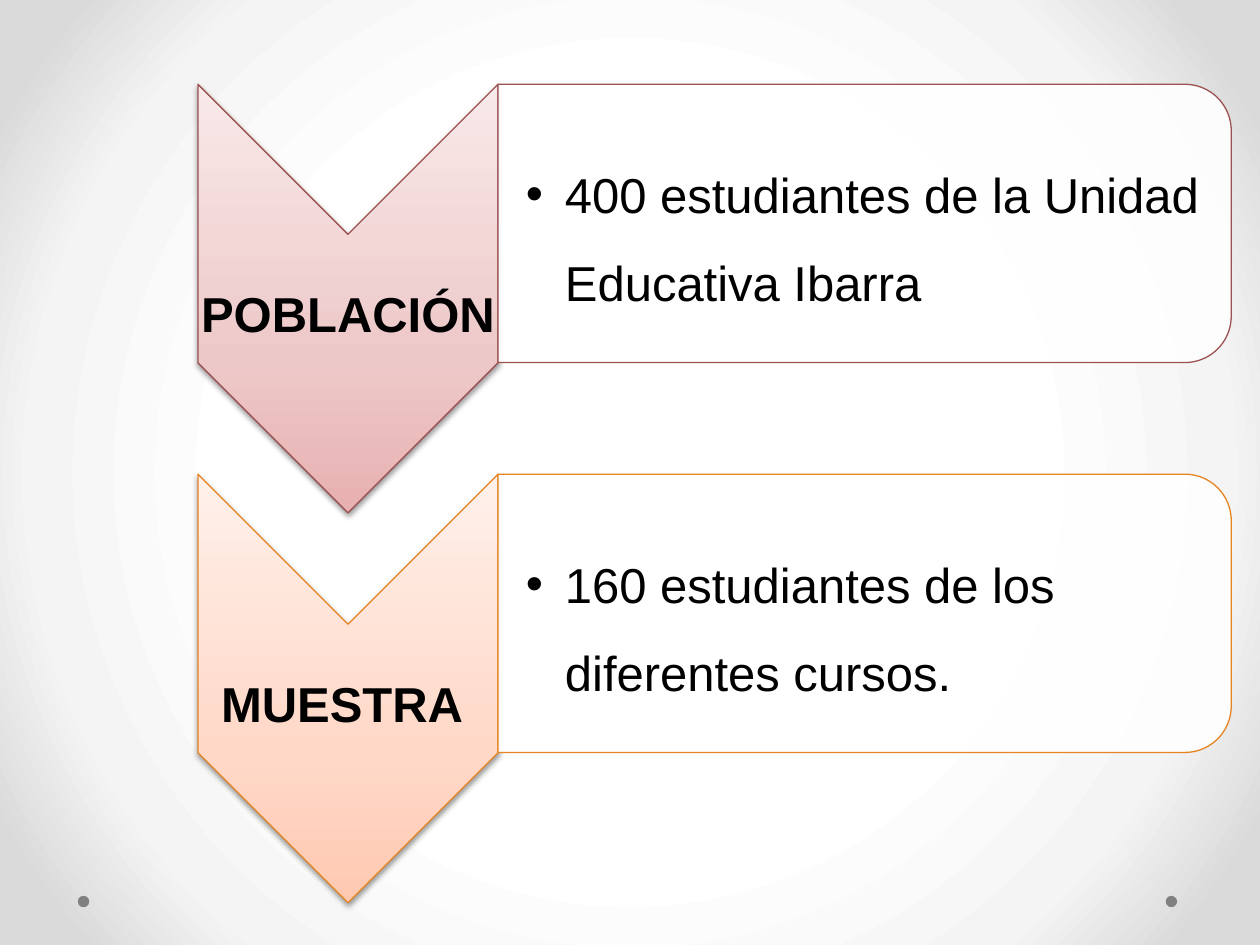
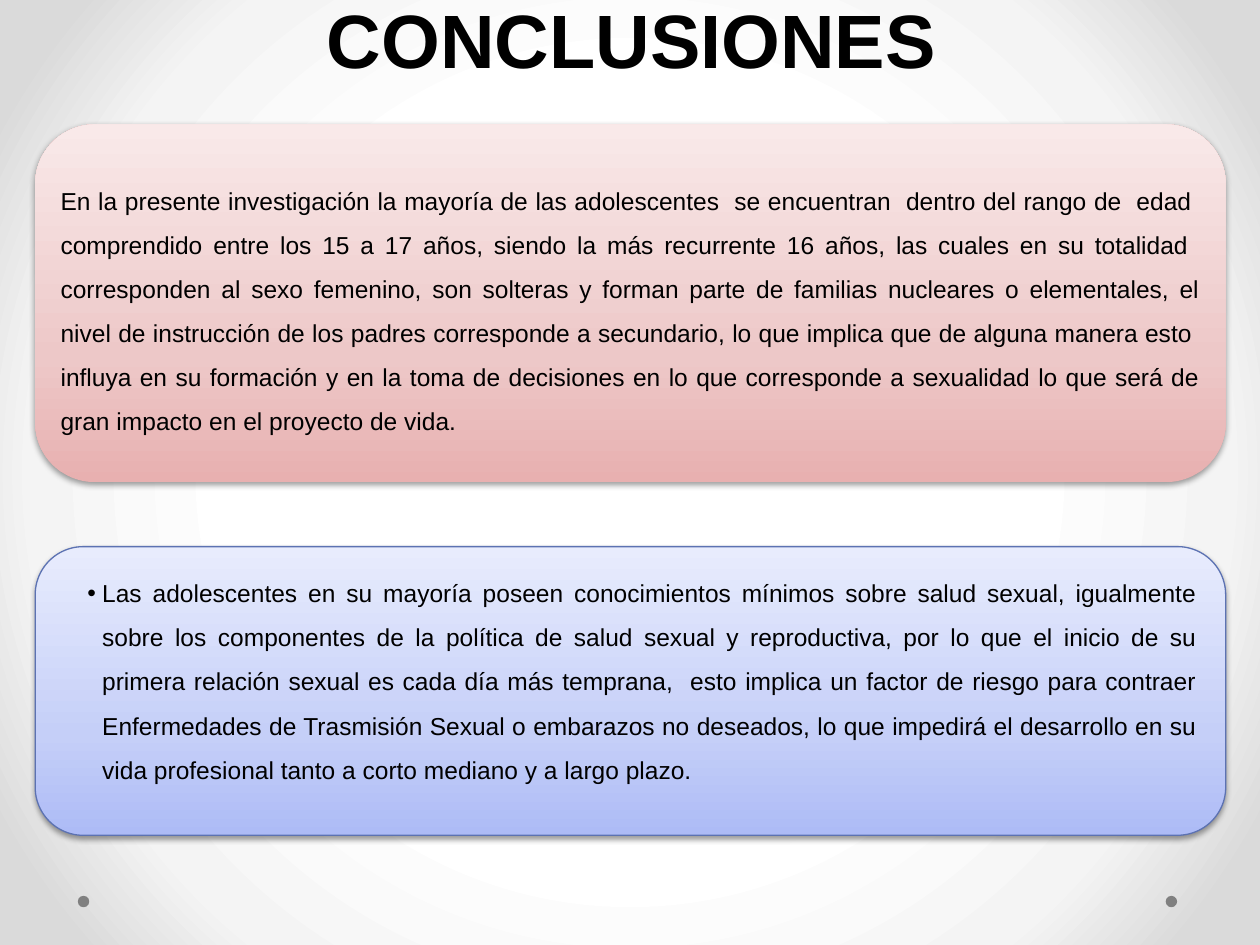
"""Builds two slides: the study's population and sample, and its conclusions."""
import lxml.etree
import pptx
import pptx.dml.color
import pptx.enum.shapes
import pptx.enum.text
import pptx.oxml.ns
import pptx.util

Cm = pptx.util.Cm
Pt = pptx.util.Pt
Shapes = pptx.enum.shapes.MSO_SHAPE
Align = pptx.enum.text.PP_ALIGN
Anchor = pptx.enum.text.MSO_ANCHOR
qn = pptx.oxml.ns.qn

RED = [(0, "E8B0B0"), (35, "EDC8C8"), (100, "F9E9E9")]
ORANGE = [(0, "FFC9B1"), (35, "FFD8C8"), (100, "FFF0EA")]
BLUE = [(0, "ADBBF6"), (35, "C5CFF8"), (100, "E8ECFD")]
BACKDROP = [(50, "FFFFFF"), (76, "F4F4F4"), (92, "DADADA")]
FONT = "Arial"

GROUPS = [
    ("POBLACIÓN ", "400 estudiantes de la Unidad Educativa Ibarra", RED, "9C5252"),
    ("MUESTRA ", "160 estudiantes de los diferentes cursos.", ORANGE, "E68422"),
]
TITLE = "CONCLUSIONES"
CONCLUSIONS = [
    dict(
        text="En la presente investigación la mayoría de las adolescentes  se encuentran  "
        "dentro del rango de  edad  comprendido entre los 15 a 17 años, siendo la más "
        "recurrente 16 años, las cuales en su totalidad  corresponden al sexo femenino, "
        "son solteras y forman parte de familias nucleares o elementales, el nivel de "
        "instrucción de los padres corresponde a secundario, lo que implica que de alguna "
        "manera esto  influya en su formación y en la toma de decisiones en lo que "
        "corresponde a sexualidad lo que será de gran impacto en el proyecto de vida.",
        top=2.51, height=7.21, stops=RED, outline=None,
        style=dict(insets=(0.15, 0.15, 0.15, 0.15), after=5),
    ),
    dict(
        text="Las adolescentes en su mayoría poseen conocimientos mínimos sobre salud sexual, "
        "igualmente sobre los componentes de la política de salud sexual y reproductiva, "
        "por lo que el inicio de su primera relación sexual es cada día más temprana,  esto "
        "implica un factor de riesgo para contraer Enfermedades de Trasmisión Sexual o "
        "embarazos no deseados, lo que impedirá el desarrollo en su vida profesional tanto "
        "a corto mediano y a largo plazo.",
        top=11.02, height=5.82, stops=BLUE, outline="5C72B2",
        style=dict(insets=(0.76, 0.05, 0.28, 0.05), after=3, hanging=0.3, anchor=Anchor.TOP),
    ),
]


def rgb(color):
    return pptx.dml.color.RGBColor.from_string(color)


def add_xml(parent, tag, attributes=None):
    child = lxml.etree.SubElement(parent, qn(tag))
    for key, value in (attributes or {}).items():
        child.set(key, str(value))
    return child


def replace_with_gradient(parent, fill, stops, radial=False):
    gradient = add_xml(parent, "a:gradFill", {"rotWithShape": 0})
    stop_list = add_xml(gradient, "a:gsLst")
    for percent, color in stops:
        stop = add_xml(stop_list, "a:gs", {"pos": percent * 1000})
        add_xml(stop, "a:srgbClr", {"val": color})
    if radial:
        circle = add_xml(gradient, "a:path", {"path": "circle"})
        add_xml(circle, "a:fillToRect", dict.fromkeys("ltrb", 50000))
    else:
        add_xml(gradient, "a:lin", {"ang": 270 * 60000, "scaled": 0})
    parent.replace(fill, gradient)


def add_shape(slide, kind, box, color="FFFFFF", outline=None, turned=False):
    left, top, width, height = box
    if turned:
        left, top = left + (width - height) / 2, top + (height - width) / 2
        width, height = height, width
    shape = slide.shapes.add_shape(kind, Cm(left), Cm(top), Cm(width), Cm(height))
    shape.rotation = 90 if turned else 0
    shape.shadow.inherit = False
    shape.fill.solid()
    shape.fill.fore_color.rgb = rgb(color)
    if outline:
        shape.line.color.rgb = rgb(outline)
        shape.line.width = Pt(0.75)
    else:
        shape.line.fill.background()
    return shape


def add_glossy(slide, kind, box, stops, outline, turned=False):
    properties = add_shape(slide, kind, box, outline=outline, turned=turned).element.spPr
    replace_with_gradient(properties, properties.find(qn("a:solidFill")), stops)
    shadow = add_xml(properties.find(qn("a:effectLst")), "a:outerShdw", {
        "blurRad": Pt(3.1), "dist": Pt(1.6), "dir": 90 * 60000, "rotWithShape": 0})
    add_xml(add_xml(shadow, "a:srgbClr", {"val": "000000"}), "a:alpha", {"val": 38000})


def add_text(slide, text, box, size, insets, align=Align.LEFT, anchor=Anchor.MIDDLE,
             spacing=1.5, after=0, bold=False, hanging=0):
    frame = slide.shapes.add_textbox(*map(Cm, box)).text_frame
    frame.word_wrap = True
    frame.vertical_anchor = anchor
    (frame.margin_left, frame.margin_top,
     frame.margin_right, frame.margin_bottom) = map(Cm, insets)
    frame.text = text
    paragraph = frame.paragraphs[0]
    paragraph.alignment = align
    paragraph.line_spacing = spacing
    paragraph.space_after = Pt(after)
    font = paragraph.runs[0].font
    font.name, font.size, font.bold = FONT, Pt(size), bold
    font.color.rgb = rgb("000000")
    if hanging:
        properties = paragraph._p.get_or_add_pPr()
        properties.set("marL", str(Cm(hanging)))
        properties.set("indent", str(-Cm(hanging)))
        add_xml(properties, "a:buFont", {"typeface": FONT})
        add_xml(properties, "a:buChar", {"char": "•"})


def add_slide(deck):
    slide = deck.slides.add_slide(deck.slide_layouts[6])
    slide.background.fill.solid()
    backdrop = slide.element.find(".//" + qn("p:bgPr"))
    replace_with_gradient(backdrop, backdrop[0], BACKDROP, radial=True)
    for left in (23.5, 1.57):
        add_shape(slide, Shapes.OVAL, (left, 18.06, 0.23, 0.23), "808080")
    return slide


def build_groups(slide):
    left, first_top, step = 3.99, 1.7, 7.86
    arrow_width, arrow_height = 6.05, 8.64
    panel_left, panel_width, panel_height = left + arrow_width, 14.78, 5.61
    margin = 0.28
    for index, (label, detail, stops, outline) in enumerate(GROUPS):
        top = first_top + index * step
        add_glossy(slide, Shapes.CHEVRON, (left, top, arrow_width, arrow_height),
                   stops, outline, turned=True)
        add_text(slide, label, (left, top + arrow_width / 2, arrow_width, arrow_height - arrow_width),
                 28, (0.05,) * 4, Align.CENTER, after=10, bold=True)
        panel = add_shape(slide, Shapes.ROUND_2_SAME_RECTANGLE,
                          (panel_left, top, panel_width, panel_height),
                          outline=outline, turned=True)
        white = panel.element.spPr.find(qn("a:solidFill"))[0]
        add_xml(white, "a:alpha", {"val": 90000})
        add_text(slide, detail,
                 (panel_left, top + margin, panel_width - margin, panel_height - 2 * margin),
                 28, (0.56, 0.05, 0.05, 0.05), after=4, hanging=0.79)


def build_conclusions(slide):
    left, width = 0.71, 24
    add_text(slide, TITLE, (1.3, 0.08, 22.86, 1.73), 43.2, (0.25, 0.13, 0.25, 0.13),
             Align.CENTER, Anchor.BOTTOM, spacing=Pt(58), bold=True)
    for card in CONCLUSIONS:
        top, height = card["top"], card["height"]
        margin = height * 0.05
        add_glossy(slide, Shapes.ROUNDED_RECTANGLE, (left, top, width, height),
                   card["stops"], card["outline"])
        add_text(slide, card["text"],
                 (left + margin, top + margin, width - 2 * margin, height - 2 * margin),
                 14, align=Align.JUSTIFY, **card["style"])


def main():
    deck = pptx.Presentation()
    deck.slide_width, deck.slide_height = Cm(25.4), Cm(19.05)
    build_groups(add_slide(deck))
    build_conclusions(add_slide(deck))
    deck.save("out.pptx")


if __name__ == "__main__":
    main()
